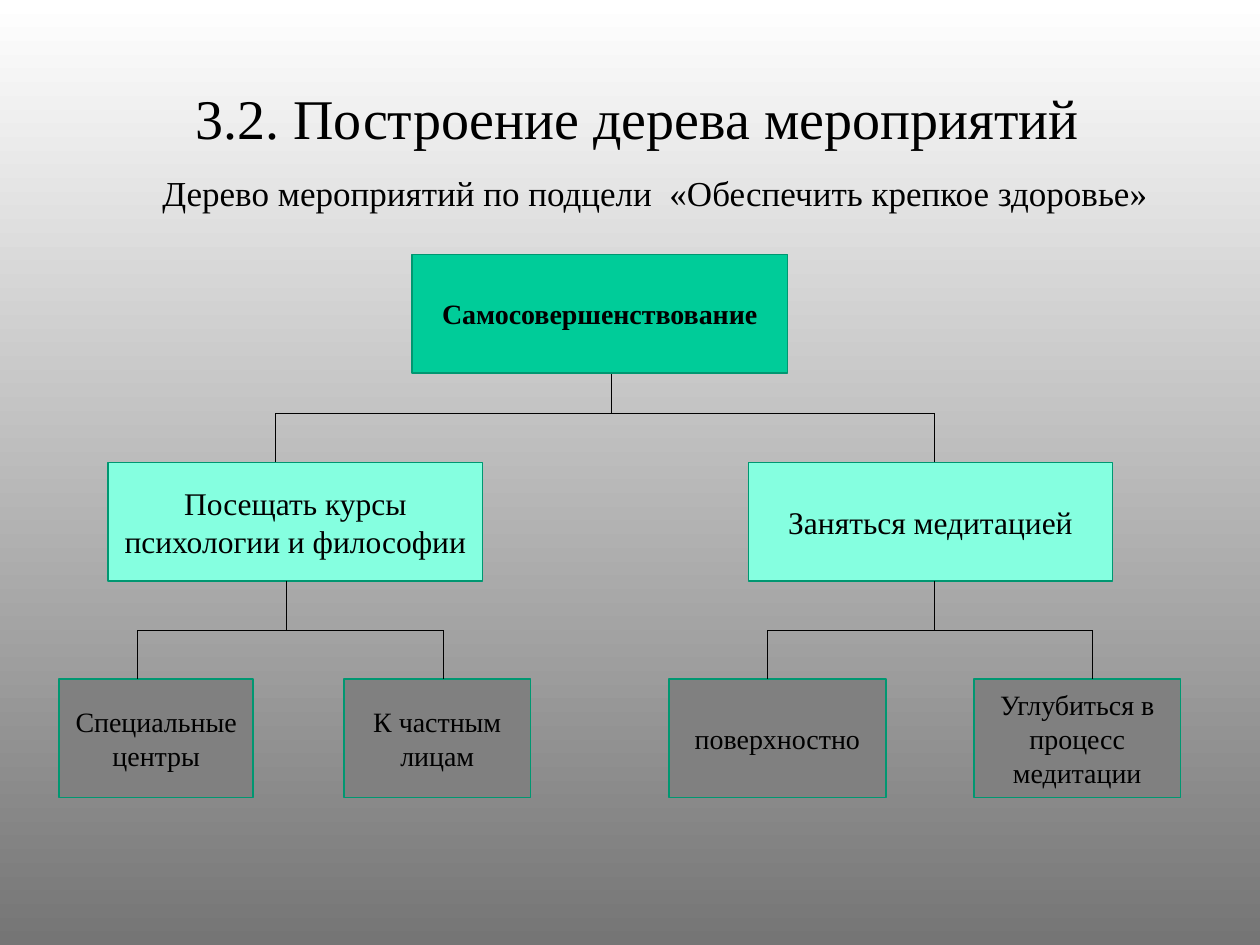
from lxml import etree
from pptx import Presentation
from pptx.dml.color import RGBColor
from pptx.enum.shapes import MSO_CONNECTOR, MSO_SHAPE
from pptx.enum.text import MSO_ANCHOR, PP_ALIGN
from pptx.oxml.ns import qn
from pptx.util import Inches, Pt

rgb = RGBColor.from_string


def write(sp, text, size, bold=False, color="000000", font="Times New Roman"):
    tf = sp.text_frame
    tf.word_wrap = True
    tf.vertical_anchor = MSO_ANCHOR.MIDDLE
    p = tf.paragraphs[0]
    p.alignment = PP_ALIGN.CENTER
    r = p.add_run()
    r.text = text
    r.font.name = font
    r.font.size = Pt(size)
    r.font.bold = bold
    r.font.color.rgb = rgb(color)


def add_line(x1, y1, x2, y2):
    ln = s.shapes.add_connector(MSO_CONNECTOR.STRAIGHT, Inches(x1), Inches(y1), Inches(x2), Inches(y2))
    ln.line.color.rgb = rgb("000000")
    ln.line.width = Pt(0.5)
    etree.SubElement(ln._element.spPr, qn("a:effectLst"))


prs = Presentation()
prs.slide_width, prs.slide_height = Inches(10), Inches(7.5)
s = prs.slides.add_slide(prs.slide_layouts[5])

fill = s.background.fill
fill.gradient()
fill.gradient_angle = 270
for stop, color in zip(fill.gradient_stops, ("FFFFFF", "757575")):
    stop.color.rgb = rgb(color)

title = s.shapes.title
title.left, title.top, title.width, title.height = (Inches(v) for v in (0.31, 0.47, 9.5, 0.92))
write(title, "3.2. Построение дерева мероприятий", 32)

subtitle = s.shapes.add_textbox(Inches(1.02), Inches(1.25), Inches(8.36), Inches(0.55))
write(subtitle, "Дерево мероприятий по подцели  «Обеспечить крепкое здоровье»", 20)

# Each level: top, fill, text size, bold, boxes as (left, width, text)
box_height = 0.94
levels = [
    (2.02, "00CC99", 16, True, [(3.27, 2.98, "Самосовершенствование")]),
    (3.67, "85FFE0", 18, False, [
        (0.86, 2.97, "Посещать курсы психологии и философии"),
        (5.94, 2.89, "Заняться медитацией"),
    ]),
    (5.39, "808080", 16, False, [
        (0.47, 1.54, "Специальные центры"),
        (2.73, 1.48, "К частным лицам"),
        (5.31, 1.72, "поверхностно"),
        (7.73, 1.64, "Углубиться в процесс медитации"),
    ]),
]
for top, color, size, bold, boxes in levels:
    for left, width, text in boxes:
        sp = s.shapes.add_shape(MSO_SHAPE.RECTANGLE, Inches(left), Inches(top), Inches(width), Inches(box_height))
        sp.shadow.inherit = False
        sp.fill.solid()
        sp.fill.fore_color.rgb = rgb(color)
        sp.line.color.rgb = rgb("009771")
        sp.line.width = Pt(1)
        write(sp, text, size, bold=bold)

# Each branch: parent x, start y, bar y, end y, children x
branches = [
    (4.85, 2.97, 3.28, 3.67, (2.19, 7.42)),
    (2.27, 4.61, 5, 5.39, (1.09, 3.52)),
    (7.42, 4.61, 5, 5.39, (6.09, 8.67)),
]
for parent_x, start_y, bar_y, end_y, children in branches:
    add_line(parent_x, start_y, parent_x, bar_y)
    add_line(children[0], bar_y, children[-1], bar_y)
    for x in children:
        add_line(x, bar_y, x, end_y)

prs.save("out.pptx")
